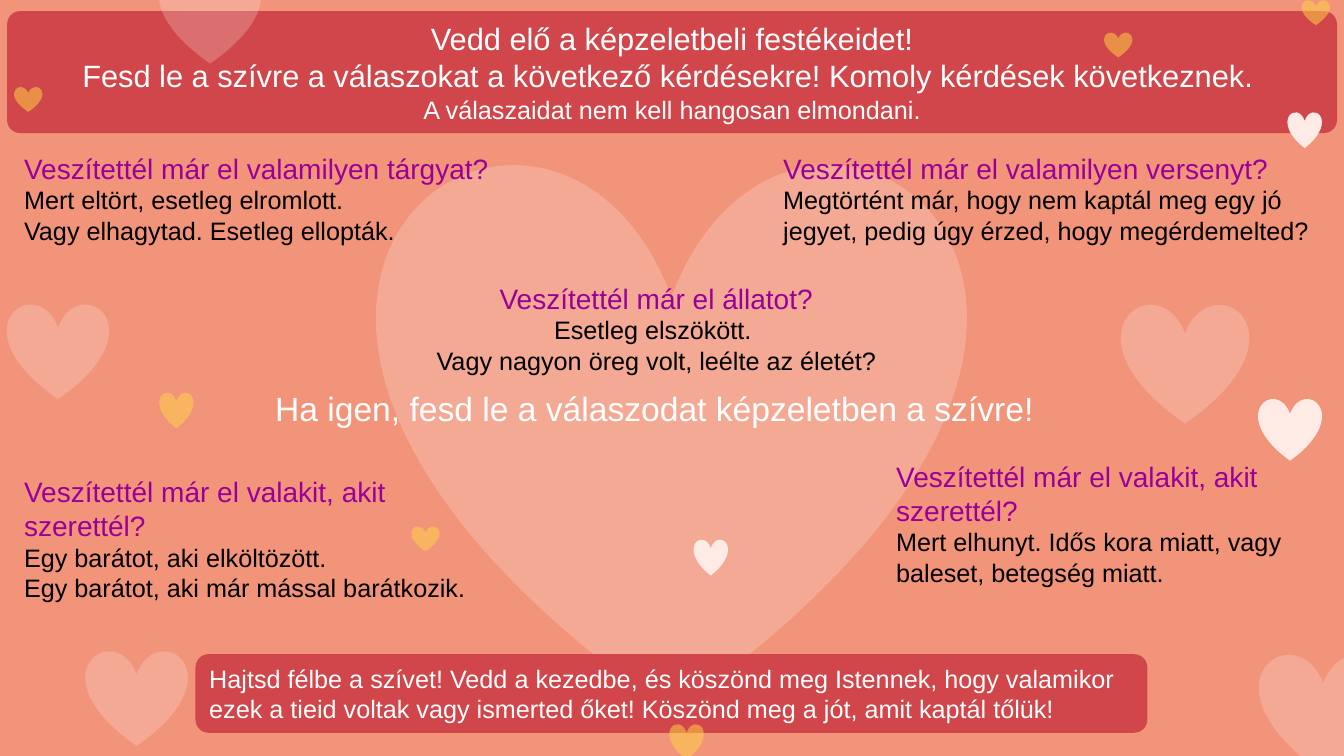
import pptx
import pptx.dml.color
import pptx.enum.shapes
import pptx.enum.text
import pptx.oxml.ns
import pptx.util
from lxml import etree

SHAPE = pptx.enum.shapes.MSO_SHAPE
ALIGN = pptx.enum.text.PP_ALIGN
WHITE, BLACK, PURPLE, RED = "FFFFFF", "000000", "990099", "D0464A"
BLUSH, GOLD, CORAL = "FFEBE5", "FFD147", "F1947A"


def rgb(value):
    return pptx.dml.color.RGBColor.from_string(value)


class HeartSlide:
    """Draws hearts, panels and texts placed in percent of the slide's size."""

    font = "Arial"

    def __init__(self, prs):
        self.width, self.height = prs.slide_width, prs.slide_height
        self.s = prs.slides.add_slide(prs.slide_layouts[6])
        fill = self.s.background.fill
        fill.solid()
        fill.fore_color.rgb = rgb(CORAL)

    def box(self, x, y, w, h):
        return (int(self.width * x / 100), int(self.height * y / 100),
                int(self.width * w / 100), int(self.height * h / 100))

    def shape(self, kind, place, color, opacity=100):
        sp = self.s.shapes.add_shape(kind, *self.box(*place))
        sp.shadow.inherit = False
        sp.fill.solid()
        sp.fill.fore_color.rgb = rgb(color)
        sp.line.fill.background()
        if opacity < 100:
            clr = sp.element.spPr.find(".//" + pptx.oxml.ns.qn("a:srgbClr"))
            etree.SubElement(clr, pptx.oxml.ns.qn("a:alpha"), val=str(opacity * 1000))
        return sp

    def hearts(self, size, corners, color, opacity=100):
        for corner in corners:
            self.shape(SHAPE.HEART, (*corner, *size), color, opacity)

    def add_lines(self, sp, lines, align=ALIGN.LEFT, wrap=True):
        tf = sp.text_frame
        tf.word_wrap = wrap
        tf.auto_size = pptx.enum.text.MSO_AUTO_SIZE.SHAPE_TO_FIT_TEXT
        for i, (text, size, color) in enumerate(lines):
            p = tf.paragraphs[0] if i == 0 else tf.add_paragraph()
            p.alignment = align
            r = p.add_run()
            r.text = text
            r.font.name = self.font
            r.font.size = pptx.util.Pt(size)
            r.font.color.rgb = rgb(color)

    def panel(self, place, lines, align=ALIGN.LEFT, corner=0.167):
        sp = self.shape(SHAPE.ROUNDED_RECTANGLE, place, RED)
        sp.adjustments[0] = corner
        self.add_lines(sp, lines, align)

    def text(self, place, lines, align=ALIGN.LEFT, wrap=True):
        self.add_lines(self.s.shapes.add_textbox(*self.box(*place)), lines, align, wrap)

    def question(self, place, title, details, align=ALIGN.LEFT):
        self.text(place, [(title, 20, PURPLE)] + [(d, 18, BLACK) for d in details], align)


def main():
    prs = pptx.Presentation()
    prs.slide_width = pptx.util.Inches(13.33)
    prs.slide_height = pptx.util.Inches(7.5)
    s = HeartSlide(prs)

    s.hearts((43.66, 73.33), [(28.13, 20.93)], BLUSH, 25)
    s.panel((0.53, 1.47, 98.95, 16.13), [
        ("Vedd elő a képzeletbeli festékeidet!", 22, WHITE),
        ("Fesd le a szívre a válaszokat a következő kérdésekre! "
         "Komoly kérdések következnek. ", 22, WHITE),
        ("A válaszaidat nem kell hangosan elmondani.", 18, WHITE),
    ], ALIGN.CENTER, 0.107)

    s.question((1.05, 19.33, 40.59, 13.87), "Veszítettél már el valamilyen tárgyat?",
               ["Mert eltört, esetleg elromlott.", "Vagy elhagytad. Esetleg ellopták."])
    s.question((57.54, 19.33, 41.94, 13.87), "Veszítettél már el valamilyen versenyt?",
               ["Megtörtént már, hogy nem kaptál meg egy jó jegyet, "
                "pedig úgy érzed, hogy megérdemelted?"])
    lost_person = "Veszítettél már el valakit, akit szerettél?"
    s.question((1.05, 62.13, 36.68, 18.4), lost_person,
               ["Egy barátot, aki elköltözött.", "Egy barátot, aki már mással barátkozik."])
    s.question((26.33, 36.53, 45.01, 13.87), "Veszítettél már el állatot?",
               ["Esetleg elszökött. ", "Vagy nagyon öreg volt, leélte az életét?"],
               ALIGN.CENTER)
    s.question((65.94, 60.13, 32.41, 22.4), lost_person,
               ["Mert elhunyt. Idős kora miatt, vagy baleset, betegség miatt."])
    s.text((19.73, 50.67, 60.62, 6.67),
           [("Ha igen, fesd le a válaszodat képzeletben a szívre!", 24, WHITE)], wrap=False)
    s.panel((14.55, 86.53, 70.82, 10.4), [
        ("Hajtsd félbe a szívet! Vedd a kezedbe, és köszönd meg Istennek, hogy valamikor "
         "ezek a tieid voltak vagy ismerted őket! Köszönd meg a jót, amit kaptál tőlük!",
         18, WHITE)])

    small, tiny = (2.55, 4.8), (2.1, 3.33)
    s.hearts((7.58, 12.67), [(0.53, 40.13), (6.38, 86), (11.85, -4.27)], BLUSH, 25)
    s.hearts((9.5, 15.9), [(83.42, 40.13), (93.7, 86.4)], BLUSH, 25)
    s.hearts(small, [(95.8, 14.8), (51.61, 71.33)], BLUSH)
    s.hearts((4.73, 8.27), [(93.62, 52.67)], BLUSH)
    s.hearts(small, [(11.85, 51.87), (49.81, 95.73)], GOLD, 53)
    s.hearts(tiny, [(96.85, 0), (30.61, 69.6), (1.05, 11.47), (82.15, 4.27)], GOLD, 53)

    prs.save("out.pptx")


if __name__ == "__main__":
    main()
